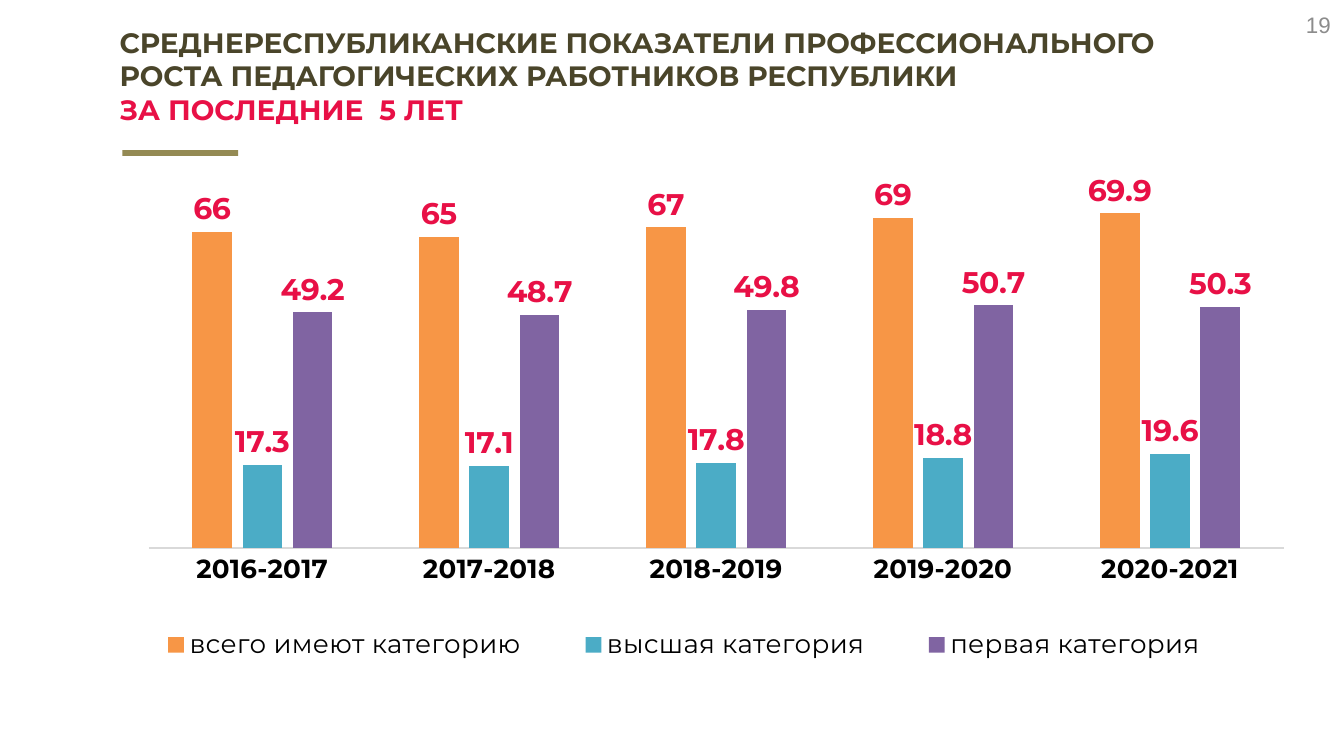
from lxml import etree
from pptx import Presentation
from pptx import util as u
from pptx.chart.data import CategoryChartData
from pptx.dml.color import RGBColor
from pptx.enum import chart as charts, shapes, text
from pptx.oxml import ns

Pt = u.Pt
FONT = "Montserrat"
ACCENT = "E81046"
YEARS = ["2016-2017", "2017-2018", "2018-2019", "2019-2020", "2020-2021"]
SERIES = [
    ("всего имеют категорию", "F79646", (66, 65, 67, 69, 69.9)),
    ("высшая категория", "4BACC6", (17.3, 17.1, 17.8, 18.8, 19.6)),
    ("первая категория", "8064A2", (49.2, 48.7, 49.8, 50.7, 50.3)),
]


def colour(value):
    return RGBColor.from_string(value)


def style_font(font, size, hex_colour, bold=False, name=FONT):
    font.name = name
    font.size = Pt(size)
    font.bold = bold
    font.color.rgb = colour(hex_colour)


def add_text(slide, box, paragraphs, size, bold=False, name=FONT,
             align=text.PP_ALIGN.LEFT, anchor=text.MSO_ANCHOR.TOP):
    """Place one paragraph for each (words, colour) pair."""
    frame = slide.shapes.add_textbox(*map(Pt, box)).text_frame
    frame.word_wrap = True
    frame.vertical_anchor = anchor
    for index, (words, hex_colour) in enumerate(paragraphs):
        paragraph = frame.add_paragraph() if index else frame.paragraphs[0]
        paragraph.alignment = align
        run = paragraph.add_run()
        run.text = words
        style_font(run.font, size, hex_colour, bold, name)


def add_heading(slide, box):
    left, top, width, height = box
    add_text(slide, box, [
        ("СРЕДНЕРЕСПУБЛИКАНСКИЕ ПОКАЗАТЕЛИ ПРОФЕССИОНАЛЬНОГО "
         "РОСТА ПЕДАГОГИЧЕСКИХ РАБОТНИКОВ РЕСПУБЛИКИ", "4A452A"),
        ("ЗА ПОСЛЕДНИЕ  5 ЛЕТ", ACCENT),
    ], 15, bold=True)
    # Short rule under the heading
    rule = slide.shapes.add_shape(
        shapes.MSO_SHAPE.RECTANGLE,
        Pt(left + 8.6), Pt(top + height + 8.5), Pt(62), Pt(3))
    rule.shadow.inherit = False
    rule.fill.solid()
    rule.fill.fore_color.rgb = colour("948A54")
    rule.line.fill.background()


def set_layout(parent, position, fractions, inner=False):
    """Fix the place of a chart part as fractions of the chart."""
    for old in parent.findall(ns.qn("c:layout")):
        parent.remove(old)
    layout = etree.Element(ns.qn("c:layout"))
    manual = etree.SubElement(layout, ns.qn("c:manualLayout"))
    settings = [("layoutTarget", "inner")] if inner else []
    settings += [("xMode", "edge"), ("yMode", "edge")]
    settings += zip("xywh", map(str, fractions))
    for tag, value in settings:
        etree.SubElement(manual, ns.qn("c:" + tag)).set("val", value)
    parent.insert(position, layout)


def add_category_chart(slide, box):
    data = CategoryChartData()
    data.categories = YEARS
    for name, _, values in SERIES:
        data.add_series(name, values)
    chart = slide.shapes.add_chart(
        charts.XL_CHART_TYPE.COLUMN_CLUSTERED, *map(Pt, box), data).chart
    chart.has_title = False
    style_font(chart.font, 10, "000000", name="Arial")

    # Columns and their value labels
    plot = chart.plots[0]
    plot.gap_width = 219
    plot.overlap = -27
    plot.vary_by_categories = False
    for series, (_, hex_colour, _) in zip(plot.series, SERIES):
        series.format.fill.solid()
        series.format.fill.fore_color.rgb = colour(hex_colour)
        labels = series.data_labels
        labels.show_value = True
        labels.position = charts.XL_LABEL_POSITION.OUTSIDE_END
        style_font(labels.font, 16, ACCENT, bold=True)

    # Axes
    value_axis = chart.value_axis
    value_axis.minimum_scale = 0
    value_axis.maximum_scale = 80
    value_axis.has_major_gridlines = False
    value_axis.visible = False
    year_axis = chart.category_axis
    year_axis.major_tick_mark = charts.XL_TICK_MARK.NONE
    year_axis.format.line.color.rgb = colour("D9D9D9")
    year_axis.format.line.width = Pt(0.75)
    style_font(year_axis.tick_labels.font, 14, "000000", bold=True)

    # Legend
    chart.has_legend = True
    legend = chart.legend
    legend.position = charts.XL_LEGEND_POSITION.BOTTOM
    legend.include_in_layout = False
    style_font(legend.font, 14, "000000")

    chart_part = chart.element.find(ns.qn("c:chart"))
    set_layout(chart_part.find(ns.qn("c:plotArea")), 0,
               (0.079, 0.175, 0.903, 0.543), inner=True)
    set_layout(chart_part.find(ns.qn("c:legend")), 1,
               (0.05, 0.81, 0.91, 0.09))


def main():
    presentation = Presentation()
    presentation.slide_width = Pt(720)
    presentation.slide_height = Pt(405)
    slide = presentation.slides.add_slide(presentation.slide_layouts[6])

    # Page number
    add_text(slide, (552, -1.5, 168, 29), [("19", "8C8C8C")], 12, name="Arial",
             align=text.PP_ALIGN.RIGHT, anchor=text.MSO_ANCHOR.MIDDLE)
    add_category_chart(slide, (26.6, 22.3, 673.2, 378))
    add_heading(slide, (57, 10, 612, 62))
    presentation.save("out.pptx")


if __name__ == "__main__":
    main()
